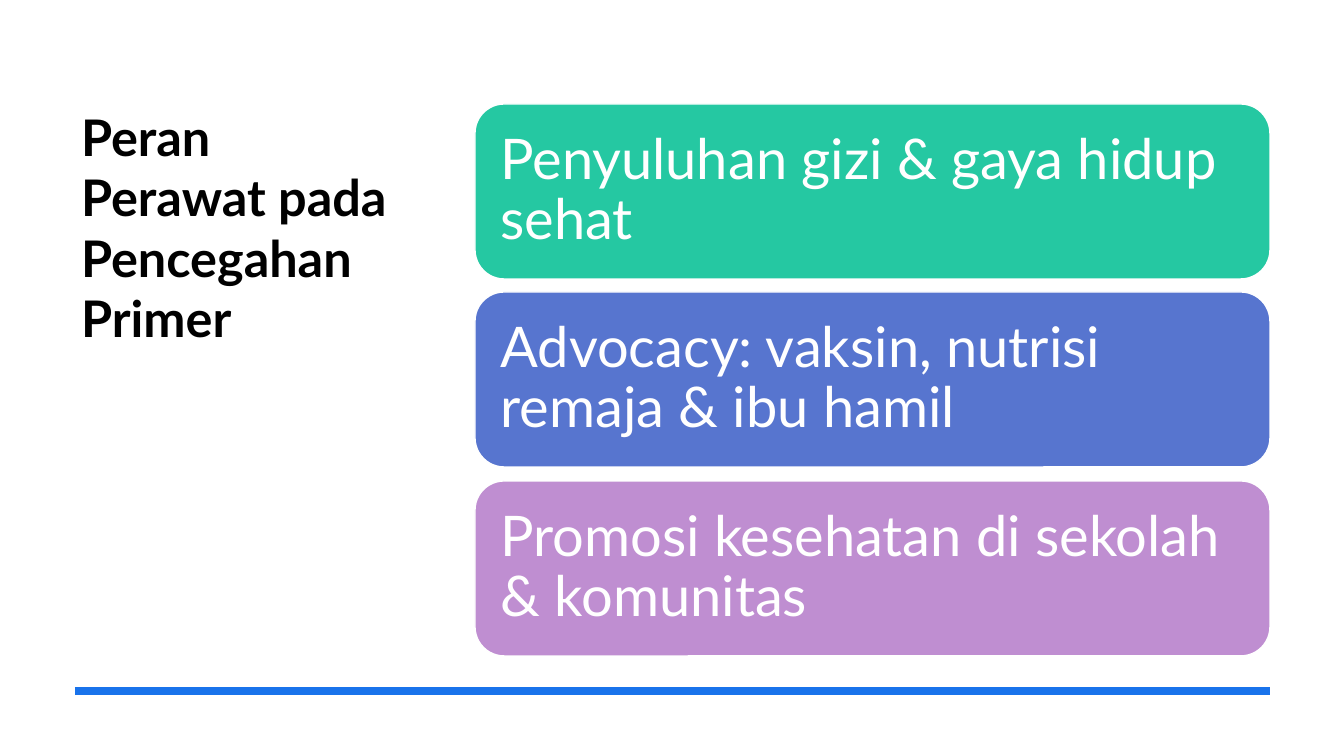
from dataclasses import dataclass

from lxml import etree
from pptx import Presentation
from pptx import util as u
from pptx.dml import color
from pptx.enum import shapes, text
from pptx.oxml import ns

EMU_PER_PX = 914400 / 100.8


def px(length):
    return u.Emu(round(length * EMU_PER_PX))


@dataclass(frozen=True)
class Theme:
    font: str = "Lato"
    title_size: int = 36
    card_size: int = 40
    rule_width: int = 6
    ink: str = "000000"
    paper: str = "FFFFFF"
    rule: str = "1973EB"
    cards: tuple = ("25C8A2", "5775CF", "BF8ED1")


class SlideBuilder:
    """Holds the theme and the current slide."""

    def __init__(self, theme, slide):
        self.theme = theme
        self.slide = slide

    def set_text(self, frame, wording, size, ink, bold=False):
        frame.word_wrap = True
        frame.auto_size = text.MSO_AUTO_SIZE.NONE
        frame.text = wording
        paragraph = frame.paragraphs[0]
        paragraph.alignment = text.PP_ALIGN.LEFT
        font = paragraph.font
        font.name, font.size, font.bold = self.theme.font, u.Pt(size), bold
        font.color.rgb = color.RGBColor.from_string(ink)
        return paragraph

    def title(self, wording, left, top, width, height):
        heading = self.slide.shapes.title
        heading.left, heading.top = px(left), px(top)
        heading.width, heading.height = px(width), px(height)
        self.set_text(heading.text_frame, wording, self.theme.title_size, self.theme.ink, bold=True)
        heading.text_frame.vertical_anchor = text.MSO_ANCHOR.TOP

    def rule(self, left, right, y):
        baseline = self.slide.shapes.add_connector(
            shapes.MSO_CONNECTOR.STRAIGHT, px(left), px(y), px(right), px(y))
        baseline.line.color.rgb = color.RGBColor.from_string(self.theme.rule)
        baseline.line.width = u.Pt(self.theme.rule_width)
        etree.SubElement(baseline._element.spPr, ns.qn("a:effectLst"))

    def card(self, wording, fill, left, top, width, height, inset=17):
        card = self.slide.shapes.add_shape(
            shapes.MSO_SHAPE.ROUNDED_RECTANGLE, px(left), px(top), px(width), px(height))
        card.shadow.inherit = False
        card.fill.solid()
        card.fill.fore_color.rgb = color.RGBColor.from_string(fill)
        card.line.color.rgb = color.RGBColor.from_string(self.theme.paper)
        card.line.width = u.Pt(1)
        frame = card.text_frame
        frame.margin_left = frame.margin_right = px(inset)
        frame.margin_top = frame.margin_bottom = px(inset)
        frame.vertical_anchor = text.MSO_ANCHOR.MIDDLE
        role = self.set_text(frame, wording, self.theme.card_size, self.theme.paper)
        role.line_spacing = 0.9


def main():
    deck = Presentation()
    deck.slide_width, deck.slide_height = px(1344), px(756)
    title_only = deck.slide_layouts[5]
    theme = Theme()
    builder = SlideBuilder(theme, deck.slides.add_slide(title_only))

    # Heading and bottom rule
    builder.title("Peran Perawat pada Pencegahan Primer", 71, 101, 331, 459)
    builder.rule(75, 1270, 691)

    # Nurse roles, spread evenly over the stack height
    roles = (
        "Penyuluhan gizi & gaya hidup sehat",
        "Advocacy: vaksin, nutrisi remaja & ibu hamil",
        "Promosi kesehatan di sekolah & komunitas",
    )
    stack_top, stack_height, card_height = 104, 552, 175
    for index, (role, fill) in enumerate(zip(roles, theme.cards)):
        top = stack_top + index * (stack_height - card_height) // (len(roles) - 1)
        builder.card(role, fill, 475, top, 795, card_height)

    deck.save("out.pptx")


if __name__ == "__main__":
    main()
